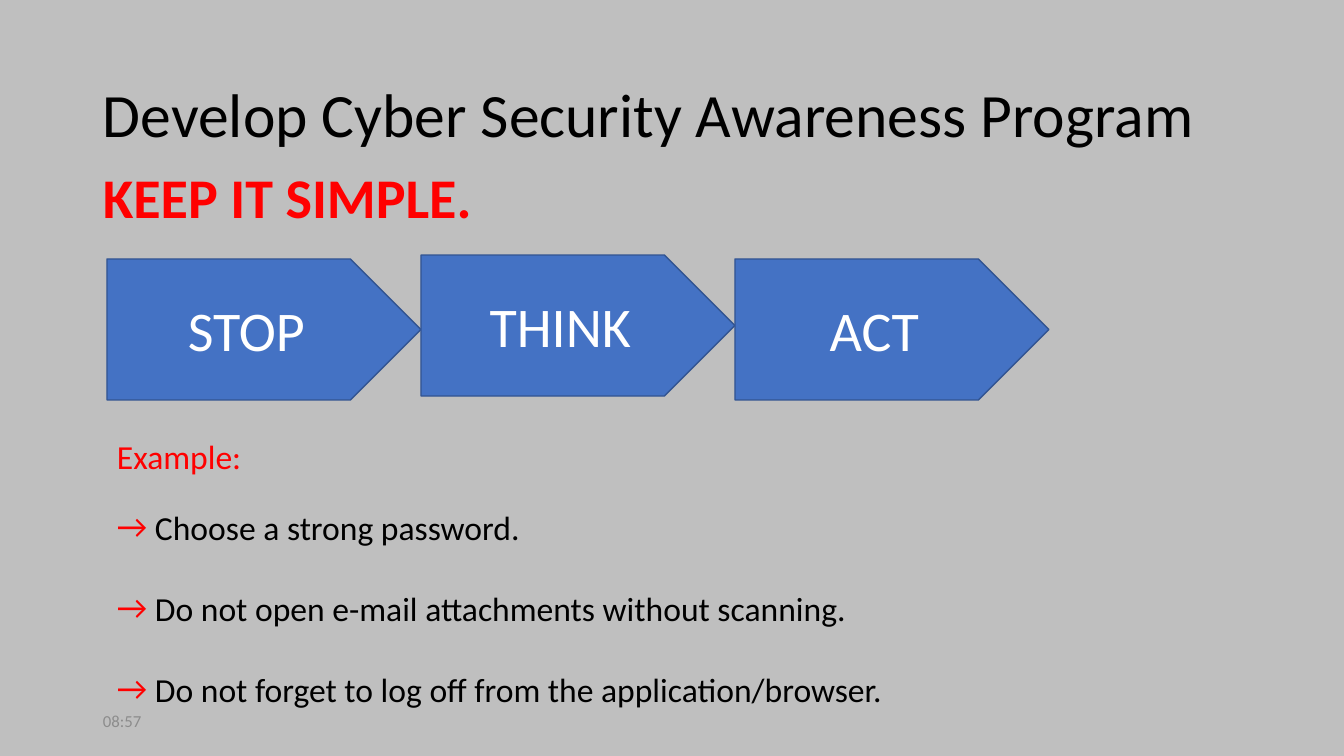
from lxml import etree
from pptx import Presentation, util as u
from pptx.dml.color import RGBColor
from pptx.enum import shapes, text
from pptx.oxml.ns import qn

BLACK = RGBColor(0, 0, 0)
WHITE = RGBColor(0xFF, 0xFF, 0xFF)
RED = RGBColor(0xFF, 0, 0)
GREY = RGBColor(0x8C, 0x8C, 0x8C)
BACKDROP = RGBColor(0xBF, 0xBF, 0xBF)
BLUE = RGBColor(0x44, 0x72, 0xC4)
OUTLINE = RGBColor(0x32, 0x54, 0x91)

MIDDLE = text.MSO_ANCHOR.MIDDLE
TOP = text.MSO_ANCHOR.TOP

LABELS = [
    ("Develop Cyber Security Awareness Program", (93, 40, 1159, 146), 44, BLACK, False, MIDDLE),
    ("08:57", (93, 701, 302, 40), 12, GREY, False, MIDDLE),
    ("KEEP IT SIMPLE.", (93, 158, 493, 78), 40, RED, True, TOP),
]
STEPS = [("STOP", 259), ("THINK", 255), ("ACT", 259)]
STEP_LEFT, STEP_W, STEP_H = 107, 314, 141
EXAMPLE_BOX = (107, 431, 892, 316)
EXAMPLE_HEAD = "Example:"
EXAMPLES = [
    ("Choose a strong password.", 22),
    ("Do not open e-mail attachments without scanning.", 29),
    ("Do not forget to log off from the application/browser.", 29),
]
BULLET_INDENT = 38


def px(n):
    return u.Emu(round(n * 914400 / 100.8))


def add_run(p, words, size, color, bold=False):
    r = p.add_run()
    r.text = words
    r.font.name = "Calibri"
    r.font.size = u.Pt(size)
    r.font.bold = bold
    r.font.color.rgb = color


def add_box(s, box, anchor):
    tf = s.shapes.add_textbox(*map(px, box)).text_frame
    tf.word_wrap = True
    tf.vertical_anchor = anchor
    return tf


def add_arrow_bullet(p):
    pPr = p._p.get_or_add_pPr()
    pPr.set("marL", str(px(BULLET_INDENT)))
    pPr.set("indent", str(-px(BULLET_INDENT)))
    color = etree.SubElement(pPr, qn("a:buClr"))
    etree.SubElement(color, qn("a:srgbClr"), val=str(RED))
    etree.SubElement(pPr, qn("a:buFont"), typeface="Calibri")
    etree.SubElement(pPr, qn("a:buChar"), char="→")


prs = Presentation()
prs.slide_width, prs.slide_height = px(1344), px(756)
s = prs.slides.add_slide(prs.slide_layouts[6])
s.background.fill.solid()
s.background.fill.fore_color.rgb = BACKDROP

for words, box, size, color, bold, anchor in LABELS:
    add_run(add_box(s, box, anchor).paragraphs[0], words, size, color, bold)

for i, (word, top) in enumerate(STEPS):
    box = (STEP_LEFT + i * STEP_W, top, STEP_W, STEP_H)
    sp = s.shapes.add_shape(shapes.MSO_SHAPE.PENTAGON, *map(px, box))
    sp.shadow.inherit = False
    sp.fill.solid()
    sp.fill.fore_color.rgb = BLUE
    sp.line.color.rgb = OUTLINE
    sp.line.width = u.Pt(1)
    tf = sp.text_frame
    tf.vertical_anchor = MIDDLE
    p = tf.paragraphs[0]
    p.alignment = text.PP_ALIGN.CENTER
    add_run(p, word, 40, WHITE)

tf = add_box(s, EXAMPLE_BOX, TOP)
add_run(tf.paragraphs[0], EXAMPLE_HEAD, 24, RED)
for words, gap in EXAMPLES:
    p = tf.add_paragraph()
    p.space_before = u.Pt(gap)
    add_arrow_bullet(p)
    add_run(p, words, 24, BLACK)

prs.save("out.pptx")
